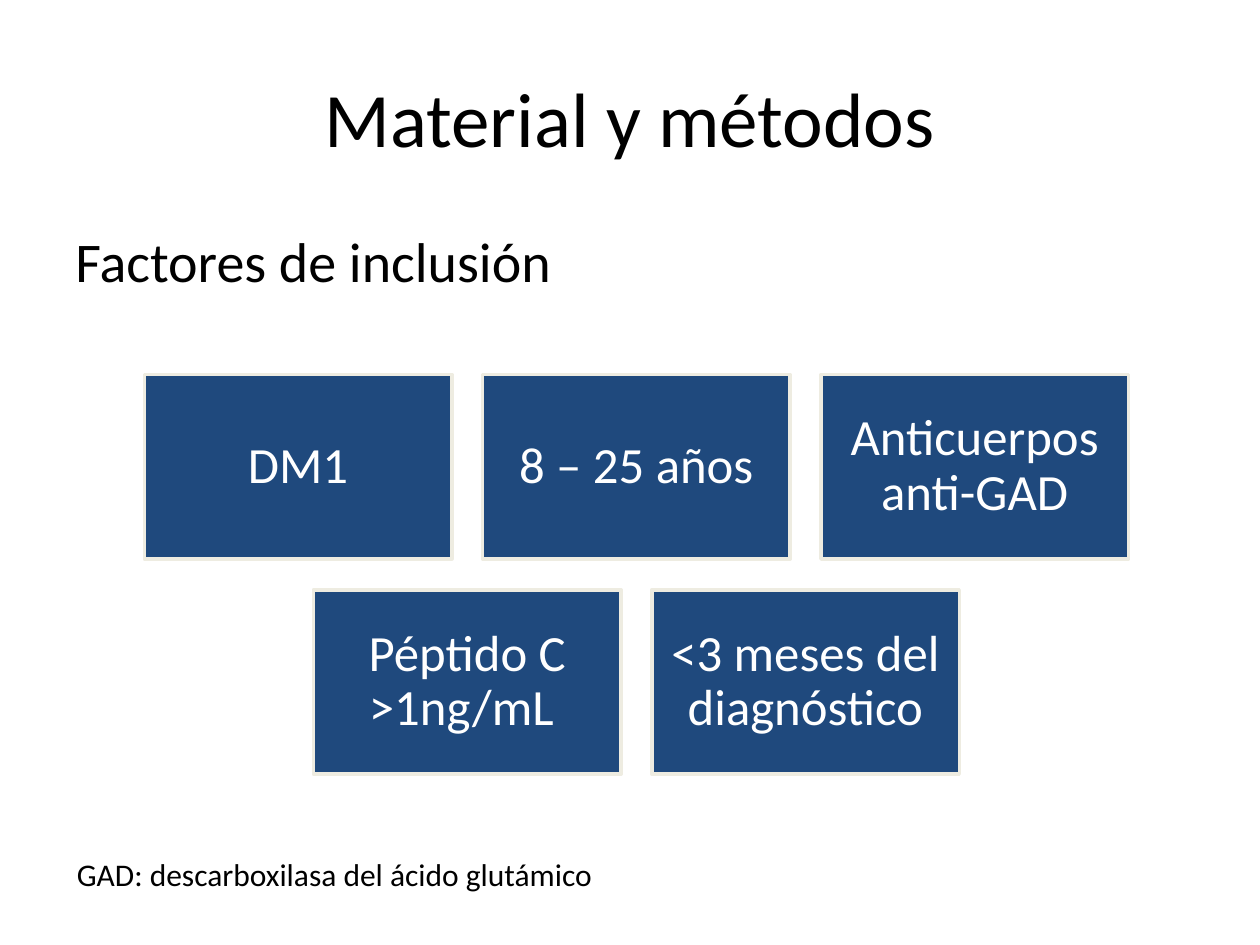
"""Build the slide on inclusion factors: title, subtitle, five boxes and a footnote."""
from pptx import Presentation
from pptx.dml.color import RGBColor
from pptx.enum.shapes import MSO_SHAPE
from pptx.enum.text import MSO_ANCHOR, PP_ALIGN
from pptx.util import Cm, Pt

RECTANGLE = MSO_SHAPE.RECTANGLE
TOP, MIDDLE = MSO_ANCHOR.TOP, MSO_ANCHOR.MIDDLE
LEFT, CENTER = PP_ALIGN.LEFT, PP_ALIGN.CENTER

BLACK = RGBColor(0x00, 0x00, 0x00)
WHITE = RGBColor(0xFF, 0xFF, 0xFF)
NAVY = RGBColor(0x1F, 0x49, 0x7D)
CREAM = RGBColor(0xEE, 0xEC, 0xE1)

BOX_WIDTH, BOX_HEIGHT, GAP = 6.2, 3.72, 0.62
GRID_CENTER, GRID_TOP = 12.83, 7.55
BOX_INSET = Cm(0.3)

FACTOR_ROWS = [
    ["DM1", "8 – 25 años", "Anticuerpos anti-GAD"],
    ["Péptido C >1ng/mL ", "<3 meses del diagnóstico"],
]
TEXTS = [
    ("Material y métodos", (1.27, 0.76, 22.86, 3.18), 44, CENTER, MIDDLE, True),
    ("Factores de inclusión", (1.27, 4.45, 22.86, 12.57), 32, LEFT, TOP, True),
    ("GAD: descarboxilasa del ácido glutámico", (1.3, 17.12, 11.23, 1.02), 18, LEFT, TOP, False),
]


def write_text(shape, text, size, color, align, frame_format):
    frame = shape.text_frame
    for name, value in frame_format.items():
        setattr(frame, name, value)
    para = frame.paragraphs[0]
    para.alignment = align
    span = para.add_run()
    span.text = text
    span.font.color.rgb = color
    for name, value in {"name": "Calibri", "size": Pt(size)}.items():
        setattr(span.font, name, value)
    return para


deck = Presentation()
deck.slide_width, deck.slide_height = Cm(25.4), Cm(19.05)
page = deck.slides.add_slide(deck.slide_layouts[6])

for text, place, size, align, anchor, wrap in TEXTS:
    box = page.shapes.add_textbox(*map(Cm, place))
    write_text(box, text, size, BLACK, align, {"word_wrap": wrap, "vertical_anchor": anchor})

box_format = {
    "word_wrap": True,
    "vertical_anchor": MIDDLE,
    "margin_left": BOX_INSET,
    "margin_right": BOX_INSET,
    "margin_top": BOX_INSET,
    "margin_bottom": BOX_INSET,
}
for row, factors in enumerate(FACTOR_ROWS):
    row_width = len(factors) * (BOX_WIDTH + GAP) - GAP
    top = GRID_TOP + row * (BOX_HEIGHT + GAP)
    for column, factor in enumerate(factors):
        left = GRID_CENTER - row_width / 2 + column * (BOX_WIDTH + GAP)
        box = page.shapes.add_shape(RECTANGLE, Cm(left), Cm(top), Cm(BOX_WIDTH), Cm(BOX_HEIGHT))
        box.shadow.inherit = False
        box.fill.solid()
        box.fill.fore_color.rgb = NAVY
        box.line.color.rgb = CREAM
        box.line.width = Pt(2)
        para = write_text(box, factor, 29, WHITE, CENTER, box_format)
        para.line_spacing = 0.9

deck.save("out.pptx")
